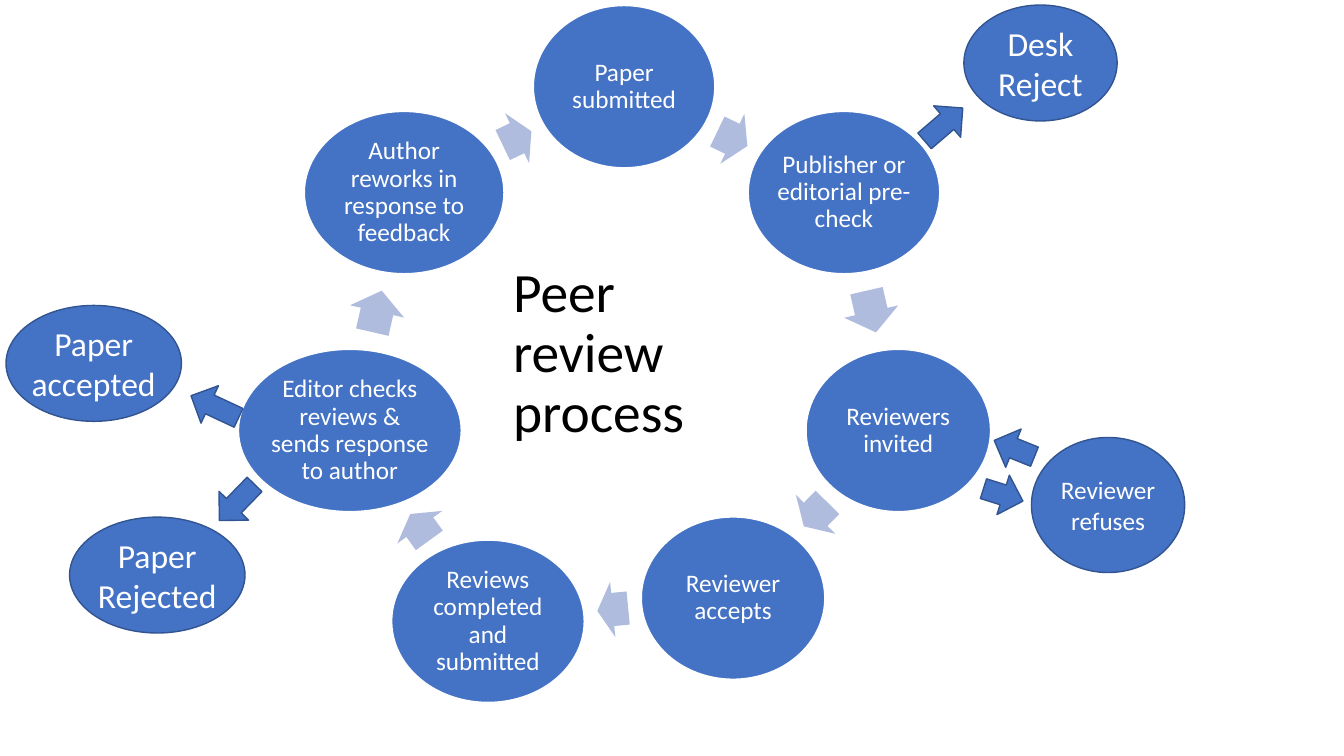
from math import atan2, cos, degrees, hypot, pi, sin

from pptx import Presentation
from pptx.dml.color import RGBColor
from pptx.enum.shapes import MSO_SHAPE
from pptx.enum.text import MSO_ANCHOR, PP_ALIGN
from pptx.util import Inches, Pt

OVAL, ARROW = MSO_SHAPE.OVAL, MSO_SHAPE.RIGHT_ARROW
MIDDLE, CENTER, LEFT = MSO_ANCHOR.MIDDLE, PP_ALIGN.CENTER, PP_ALIGN.LEFT

COLORS = {"blue": "4472C4", "edge": "325491", "pale": "B0BCDE",
          "white": "FFFFFF", "black": "000000"}
FONT = "Calibri"
STEP_H = 1.61       # height of every step oval
ARROW_SHARE = 0.53  # part of the gap that a ring arrow fills

# Text, oval width, offset from the even ring position
STEPS = [
    ("Paper submitted", 1.8, (0, 0)),
    ("Publisher or editorial pre-check", 1.9, (0, 0)),
    ("Reviewers invited", 1.83, (0, 0)),
    ("Reviewer accepts", 1.82, (-0.13, -0.23)),
    ("Reviews completed and submitted", 1.91, (-0.14, 0)),
    ("Editor checks reviews & sends response to author", 2.21, (0, 0)),
    ("Author reworks in response to feedback", 1.98, (0, 0)),
]

# Text, box, size, arrows as (dx, dy, length, rotation) from the oval's centre
OUTCOMES = [
    ("Desk Reject", (9.56, 0.05, 1.52, 1.15), 24, [(-0.96, 0.61, 0.5, 319.3)]),
    ("Paper Rejected", (0.69, 5.13, 1.74, 1.15), 24, [(0.79, -0.72, 0.5, 134.2)]),
    ("Reviewer refuses", (10.23, 4.34, 1.52, 1.34), 18,
     [(-1.04, -0.1, 0.41, 17.5), (-0.93, -0.56, 0.43, 202)]),
    ("Paper accepted", (0.06, 3.03, 1.74, 1.15), 24, [(1.2, 0.43, 0.52, 205)]),
]


def rgb(name):
    return RGBColor.from_string(COLORS[name])


def write(shape, text, size, color, align, spacing, inset):
    tf = shape.text_frame
    margins = {"margin_left": inset, "margin_right": inset,
               "margin_top": inset / 2, "margin_bottom": inset / 2}
    for name, value in margins.items():
        setattr(tf, name, Inches(value))
    tf.word_wrap = True
    tf.vertical_anchor = MIDDLE
    p = tf.paragraphs[0]
    p.alignment, p.line_spacing = align, spacing
    r = p.add_run()
    r.text = text
    for name, value in {"name": FONT, "size": Pt(size)}.items():
        setattr(r.font, name, value)
    r.font.color.rgb = rgb(color)


def add_centred(s, kind, cx, cy, w, h, fill, line=None, rotation=0):
    sp = s.shapes.add_shape(kind, Inches(cx - w / 2), Inches(cy - h / 2),
                            Inches(w), Inches(h))
    sp.shadow.inherit = False
    sp.rotation = rotation
    sp.fill.solid()
    sp.fill.fore_color.rgb = rgb(fill)
    if line:
        sp.line.color.rgb = rgb(line)
        sp.line.width = Pt(1)
    else:
        sp.line.fill.background()
    return sp


def reach(width, ux, uy):
    """Distance from a step oval's centre to its edge along (ux, uy)."""
    return 1 / hypot(ux / (width / 2), uy / (STEP_H / 2))


def add_title(s, box, text):
    sp = s.shapes.add_textbox(*map(Inches, box))
    write(sp, text, 39.6, "black", LEFT, 0.9, 0.1)


def add_ring(s, box):
    x, y, w, h = box
    nodes = []
    for i, (text, width, (dx, dy)) in enumerate(STEPS):
        angle = 2 * pi * i / len(STEPS)
        cx = x + w / 2 * (1 + sin(angle)) + dx
        cy = y + h / 2 * (1 - cos(angle)) + dy
        nodes.append((cx, cy, width))
        sp = add_centred(s, OVAL, cx, cy, width, STEP_H, "blue", "white")
        write(sp, text, 18, "white", CENTER, 0.9, 0)

    # Arrows sit in the middle of the gap between neighbouring ovals
    for (x1, y1, w1), (x2, y2, w2) in zip(nodes, nodes[1:] + nodes[:1]):
        dist = hypot(x2 - x1, y2 - y1)
        ux, uy = (x2 - x1) / dist, (y2 - y1) / dist
        r1, r2 = reach(w1, ux, uy), reach(w2, ux, uy)
        mid = (dist + r1 - r2) / 2
        sp = add_centred(s, ARROW, x1 + ux * mid, y1 + uy * mid,
                         ARROW_SHARE * (dist - r1 - r2), 0.55, "pale",
                         rotation=degrees(atan2(uy, ux)) % 360)
        sp.adjustments[0] = 0.6
        sp.adjustments[1] = 0.5


def add_outcome(s, box, text, size, arrows):
    x, y, w, h = box
    cx, cy = x + w / 2, y + h / 2
    for dx, dy, length, rotation in arrows:
        add_centred(s, ARROW, cx + dx, cy + dy, length, 0.41,
                    "blue", "edge", rotation)
    sp = add_centred(s, OVAL, cx, cy, w, h, "blue", "edge")
    write(sp, text, size, "white", CENTER, 1.0, 0)


def main():
    prs = Presentation()
    prs.slide_width, prs.slide_height = Inches(13.33), Inches(7.5)
    s = prs.slides.add_slide(prs.slide_layouts[6])
    add_title(s, (4.99, 2.5, 2.57, 2.03), "Peer review process")
    add_ring(s, (3.4, 0.86, 5.58, 5.58))
    for text, box, size, arrows in OUTCOMES:
        add_outcome(s, box, text, size, arrows)
    prs.save("out.pptx")


if __name__ == "__main__":
    main()
